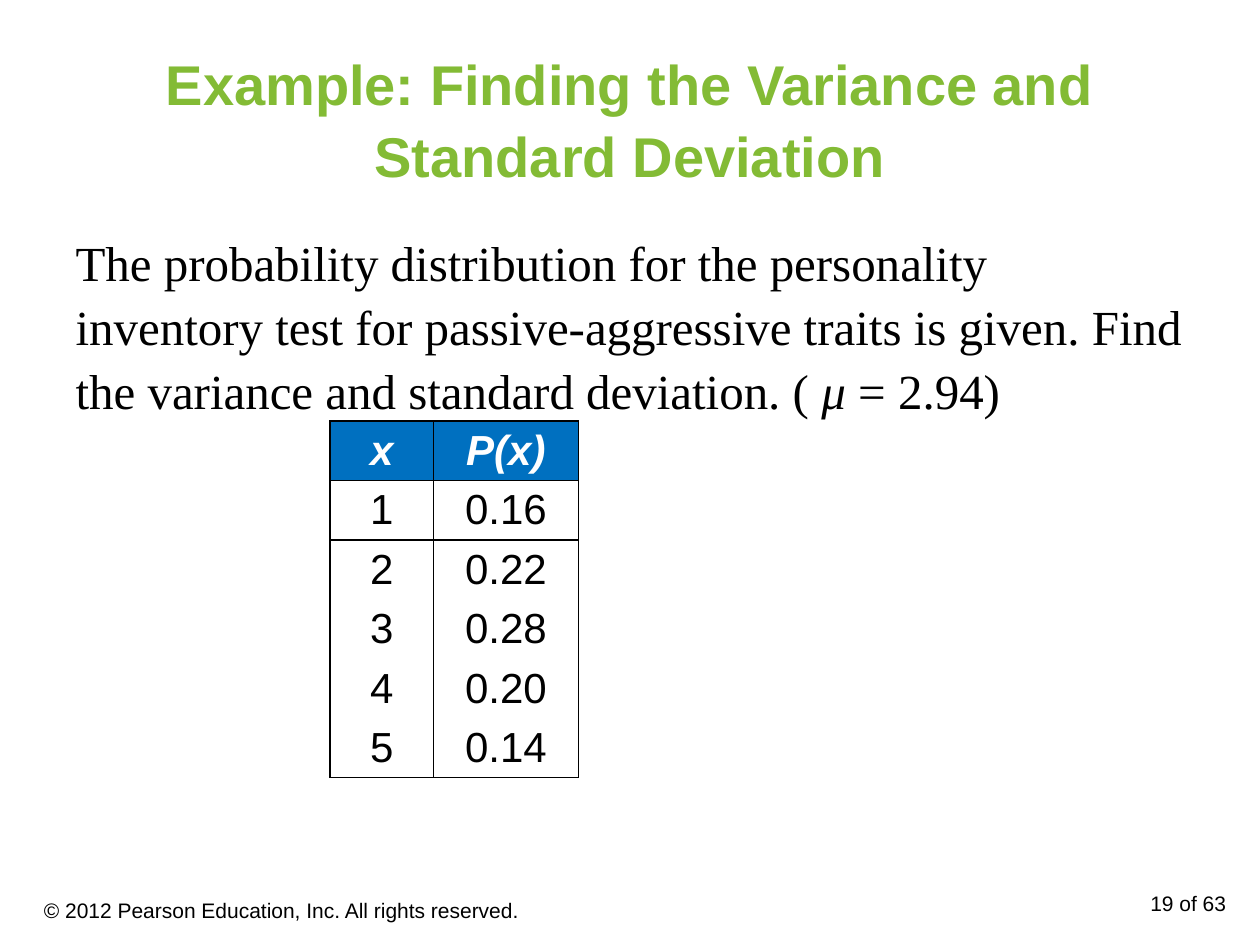
from lxml import etree
from pptx import Presentation
from pptx.dml.color import RGBColor
from pptx.enum.text import MSO_ANCHOR, MSO_AUTO_SIZE, PP_ALIGN
from pptx.oxml.ns import qn
from pptx.util import Inches, Pt

LEFT, CENTER, RIGHT = PP_ALIGN.LEFT, PP_ALIGN.CENTER, PP_ALIGN.RIGHT
TOP, MIDDLE = MSO_ANCHOR.TOP, MSO_ANCHOR.MIDDLE
NO_AUTOFIT = MSO_AUTO_SIZE.NONE
COLORS = {"title": "83BB35", "header": "0070C0", "text": "000000", "light": "FFFFFF"}


def add_span(para, text, color, **formats):
    span = para.add_run()
    span.text = text
    span.font.color.rgb = RGBColor.from_string(COLORS[color])
    for name, value in formats.items():
        setattr(span.font, name, value)


def set_border(cell, side, visible):
    line = etree.SubElement(cell._tc.get_or_add_tcPr(), qn(f"a:{side}"), w=str(Pt(1)))
    if visible:
        fill = etree.SubElement(line, qn("a:solidFill"))
        etree.SubElement(fill, qn("a:srgbClr"), val=COLORS["text"])
    else:
        etree.SubElement(line, qn("a:noFill"))


deck = Presentation()
deck.slide_width, deck.slide_height = Inches(10), Inches(7.5)
page = deck.slides.add_slide(deck.slide_layouts[1])
margin = deck.slide_width * 0.05
content_width = deck.slide_width * 0.9

title, body = page.placeholders
for box, top, height, anchor, align, spacing in (
    (title, 0.3, 1.25, MIDDLE, CENTER, 1.07),
    (body, 1.75, 1.51, TOP, LEFT, 1.09),
):
    box.left, box.width = int(margin), int(content_width)
    box.top, box.height = Inches(top), Inches(height)
    frame = box.text_frame
    frame.auto_size, frame.vertical_anchor, frame.word_wrap = NO_AUTOFIT, anchor, True
    para = frame.paragraphs[0]
    para.alignment, para.line_spacing, para.space_before = align, spacing, Pt(0)

add_span(title.text_frame.paragraphs[0], "Example: Finding the Variance and Standard Deviation",
         "title", name="Arial", size=Pt(32), bold=True)

para = body.text_frame.paragraphs[0]
properties = para._p.get_or_add_pPr()
properties.set("marL", "0")
properties.set("indent", "0")
etree.SubElement(properties, qn("a:buNone"))
for text, italic in (
    ("The probability distribution for the personality inventory test for passive-aggressive "
     "traits is given. Find the variance and standard deviation. ( ", False),
    ("μ", True),
    (" = 2.94)", False),
):
    add_span(para, text, "text", name="Times New Roman", size=Pt(28), italic=italic)

distribution = [("x", "P(x)"), ("1", "0.16"), ("2", "0.22"), ("3", "0.28"), ("4", "0.20"), ("5", "0.14")]
column_widths = [0.82, 1.15]
row_height = 0.47
last_row = len(distribution) - 1
ruled_above = {0, 1, 2}
ruled_below = {0, 1, last_row}

table = page.shapes.add_table(
    len(distribution), len(column_widths), Inches(2.62), Inches(3.34),
    Inches(sum(column_widths)), Inches(row_height * len(distribution)),
).table
table.first_row = table.horz_banding = False
for column, width in zip(table.columns, column_widths):
    column.width = Inches(width)
for row, values in enumerate(distribution):
    table.rows[row].height = Inches(row_height)
    header = row == 0
    for column, value in enumerate(values):
        cell = table.cell(row, column)
        for side, visible in (("lnL", True), ("lnR", True),
                              ("lnT", row in ruled_above), ("lnB", row in ruled_below)):
            set_border(cell, side, visible)
        if header:
            cell.fill.solid()
            cell.fill.fore_color.rgb = RGBColor.from_string(COLORS["header"])
        else:
            cell.fill.background()
        para = cell.text_frame.paragraphs[0]
        para.alignment = CENTER
        add_span(para, value, "light" if header else "text",
                 name="Arial", size=Pt(24), bold=header, italic=header)

for text, left, width, align, anchor in (
    ("© 2012 Pearson Education, Inc. All rights reserved.", 0.25, 4.75, LEFT, MIDDLE),
    ("19 of 63", 7.5, 2.33, RIGHT, TOP),
):
    box = page.shapes.add_textbox(Inches(left), Inches(7.02), Inches(width), Inches(0.4))
    frame = box.text_frame
    frame.word_wrap, frame.vertical_anchor = True, anchor
    para = frame.paragraphs[0]
    para.alignment = align
    add_span(para, text, "text", name="Arial", size=Pt(12))

deck.save("out.pptx")
